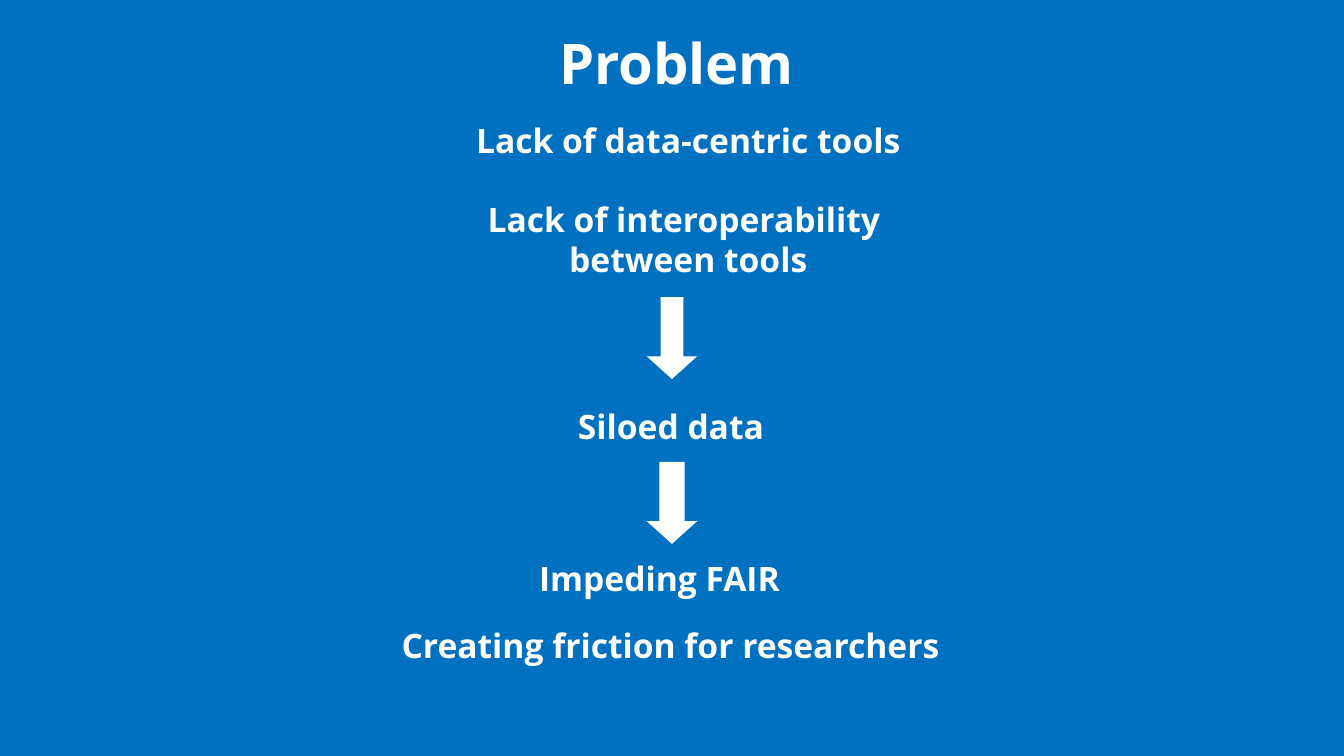
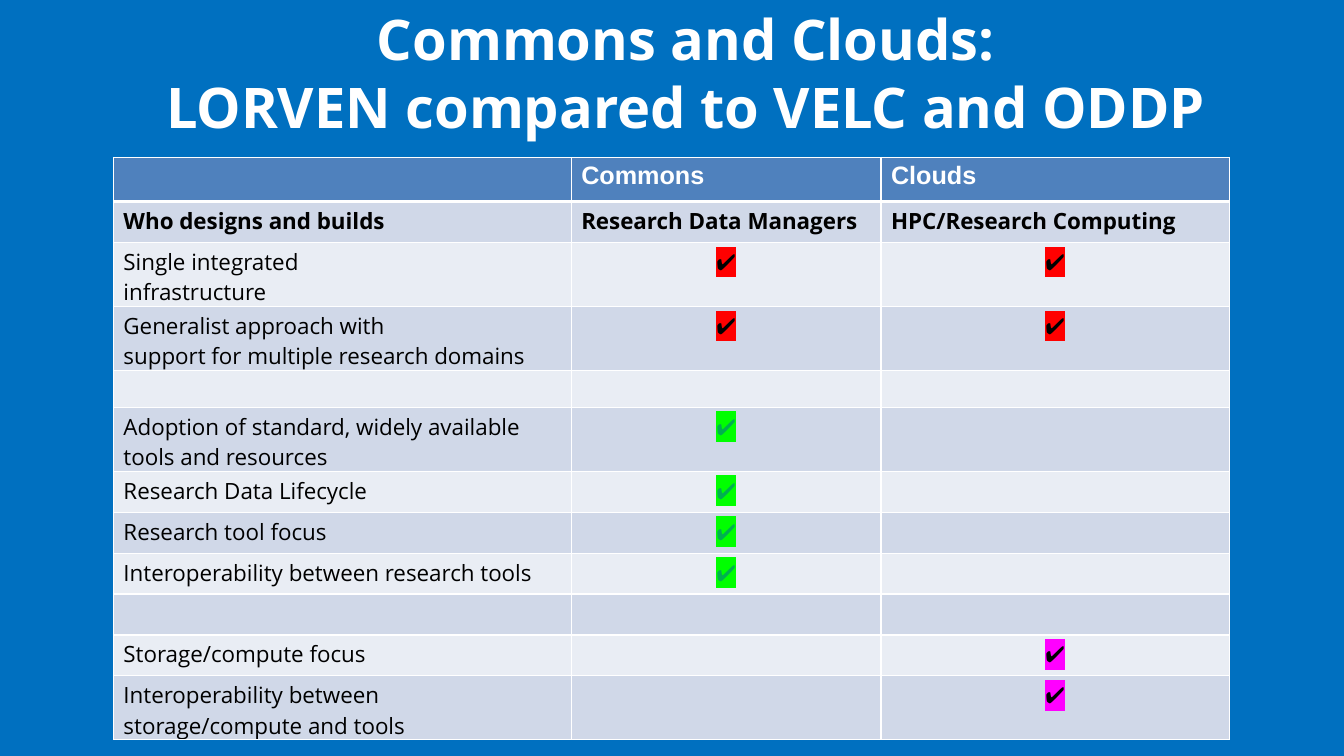
from lxml import etree
from pptx import Presentation
from pptx import util as u
from pptx.dml.color import RGBColor
from pptx.enum import shapes, text
from pptx.oxml.ns import qn

PX = 9525
COLORS = {
    "background": "0070C0",
    "white": "FFFFFF",
    "black": "000000",
    "header": "4F81BD",
    "band_dark": "D0D8E8",
    "band_light": "E9EDF4",
    "tick_green": "00B050",
    "both": "FF0000",
    "commons": "00FF00",
    "clouds": "FF00FF",
}
CHECK = "✔️"
TICKS = {
    "both": ("black", (1, 2)),
    "commons": ("tick_green", (1,)),
    "clouds": ("black", (2,)),
}


class Deck:
    font = "Open Sans"
    title_size = 40
    body_size = 24
    cell_size = 16

    def __init__(self, width, height):
        self.presentation = Presentation()
        self.presentation.slide_width = self.px(width)
        self.presentation.slide_height = self.px(height)
        self.slide = None

    @staticmethod
    def px(length):
        return u.Emu(length * PX)

    @staticmethod
    def color(name):
        return RGBColor.from_string(COLORS[name])

    def box(self, *lengths):
        return [self.px(length) for length in lengths]

    def add_slide(self):
        layout = self.presentation.slide_layouts[6]
        self.slide = self.presentation.slides.add_slide(layout)
        fill = self.slide.background.fill
        fill.solid()
        fill.fore_color.rgb = self.color("background")

    def run(self, paragraph, words, size, color="white", bold=True, font=None, highlight=None):
        run = paragraph.add_run()
        run.text = words
        run.font.size = u.Pt(size)
        run.font.bold = bold
        run.font.color.rgb = self.color(color)
        run.font.name = font or self.font
        if highlight:
            mark = etree.Element(qn("a:highlight"))
            etree.SubElement(mark, qn("a:srgbClr"), val=COLORS[highlight])
            run.font._element.find(qn("a:solidFill")).addnext(mark)

    def text(self, left, top, width, height, lines, size=body_size, centered=False):
        shape = self.slide.shapes.add_textbox(*self.box(left, top, width, height))
        frame = shape.text_frame
        frame.word_wrap = True
        frame.auto_size = text.MSO_AUTO_SIZE.SHAPE_TO_FIT_TEXT
        for index, line in enumerate(lines):
            paragraph = frame.paragraphs[0] if index == 0 else frame.add_paragraph()
            if centered:
                paragraph.alignment = text.PP_ALIGN.CENTER
            self.run(paragraph, line, size)
        return frame.paragraphs

    def title(self, left, top, width, height, lines):
        paragraphs = self.text(left, top, width, height, lines, self.title_size, True)
        for paragraph in paragraphs:
            properties = paragraph._p.get_or_add_pPr()
            properties.set("marL", str(self.px(48)))
            properties.set("indent", "0")
        return paragraphs

    def down_arrow(self, left, top, width, height, shaft):
        shape = self.slide.shapes.add_shape(
            shapes.MSO_SHAPE.DOWN_ARROW, *self.box(left, top, width, height))
        shape.adjustments[0] = shaft
        shape.adjustments[1] = 0.45
        shape.shadow.inherit = False
        shape.fill.solid()
        shape.fill.fore_color.rgb = self.color("white")
        shape.line.fill.background()

    def cell_borders(self, cell, bottom):
        properties = cell._tc.get_or_add_tcPr()
        widths = {"lnL": 1, "lnR": 1, "lnT": 1, "lnB": bottom}
        for position, (side, width) in enumerate(widths.items()):
            line = etree.Element(qn("a:" + side), w=str(u.Pt(width)))
            fill = etree.SubElement(line, qn("a:solidFill"))
            etree.SubElement(fill, qn("a:srgbClr"), val=COLORS["white"])
            properties.insert(position, line)

    def table(self, left, top, columns, heights):
        frame = self.slide.shapes.add_table(
            len(heights), len(columns),
            *self.box(left, top, sum(columns), sum(heights)))
        table = frame.table
        table.horz_banding = False
        for column, width in zip(table.columns, columns):
            column.width = self.px(width)
        for index, height in enumerate(heights):
            row = table.rows[index]
            row.height = self.px(height)
            band = "band_dark" if index % 2 else "band_light"
            for cell in row.cells:
                cell.fill.solid()
                cell.fill.fore_color.rgb = self.color(band if index else "header")
                cell.margin_top = self.px(4)
                cell.margin_bottom = 0
                self.cell_borders(cell, 1 if index else 3)
        return table

    def cell_text(self, cell, lines, size=cell_size, centered=False, **style):
        frame = cell.text_frame
        for index, line in enumerate(lines):
            paragraph = frame.paragraphs[0] if index == 0 else frame.add_paragraph()
            if centered:
                paragraph.alignment = text.PP_ALIGN.CENTER
            self.run(paragraph, line, size, **style)

    def empty_cell(self, cell):
        paragraph = cell.text_frame.paragraphs[0]._p
        etree.SubElement(paragraph, qn("a:endParaRPr"), sz=str(self.cell_size * 100))


def build_problem(deck):
    deck.add_slide()
    heading = deck.title(474, 22, 293, 73, ["Problem"])[0]
    deck.run(heading, " ", 36)
    causes = deck.text(384, 109, 543, 163, [
        "Lack of data-centric tools",
        "Lack of interoperability ",
        "between tools",
    ], centered=True)
    causes[1].space_before = u.Pt(28)
    for top, shaft in ((283, 0.45), (440, 0.5)):
        deck.down_arrow(616, top, 48, 78, shaft)
    for left, top, width, words in (
        (541, 382, 197, "Siloed data"),
        (504, 527, 273, "Impeding FAIR"),
        (373, 590, 533, "Creating friction for researchers"),
    ):
        deck.text(left, top, width, 48, [words])


def build_comparison(deck):
    deck.add_slide()
    deck.title(67, 0, 1124, 139,
               ["Commons and Clouds:", "LORVEN compared to VELC and ODDP"])
    features = [
        (61, ["Single integrated", "infrastructure"], "both"),
        (61, ["Generalist approach with", "support for multiple research domains"], "both"),
        (35, [], None),
        (61, ["Adoption of standard, widely available", "tools and resources"], "commons"),
        (39, ["Research Data Lifecycle"], "commons"),
        (39, ["Research tool focus"], "commons"),
        (39, ["Interoperability between research tools"], "commons"),
        (39, [], None),
        (39, ["Storage/compute focus"], "clouds"),
        (61, ["Interoperability between", "storage/compute and tools"], "clouds"),
    ]
    heights = [42, 39] + [height for height, _, _ in features]
    table = deck.table(108, 150, [436, 295, 332], heights)
    for column, words in enumerate(("Commons", "Clouds"), 1):
        deck.cell_text(table.cell(0, column), [words], 18, font="Arial")
    builders = ("Who designs and builds", "Research Data Managers", "HPC/Research Computing")
    for column, words in enumerate(builders):
        deck.cell_text(table.cell(1, column), [words], color="black")
    for row, (_, label, owner) in enumerate(features, 2):
        deck.cell_text(table.cell(row, 0), label, color="black", bold=False)
        color, columns = TICKS.get(owner, ("black", ()))
        for column in columns:
            deck.cell_text(table.cell(row, column), [CHECK], centered=True,
                           color=color, bold=False, highlight=owner)
    for cell in table.iter_cells():
        if not cell.text_frame.text:
            deck.empty_cell(cell)


def main():
    deck = Deck(1280, 720)
    build_problem(deck)
    build_comparison(deck)
    deck.presentation.save("out.pptx")


if __name__ == "__main__":
    main()
